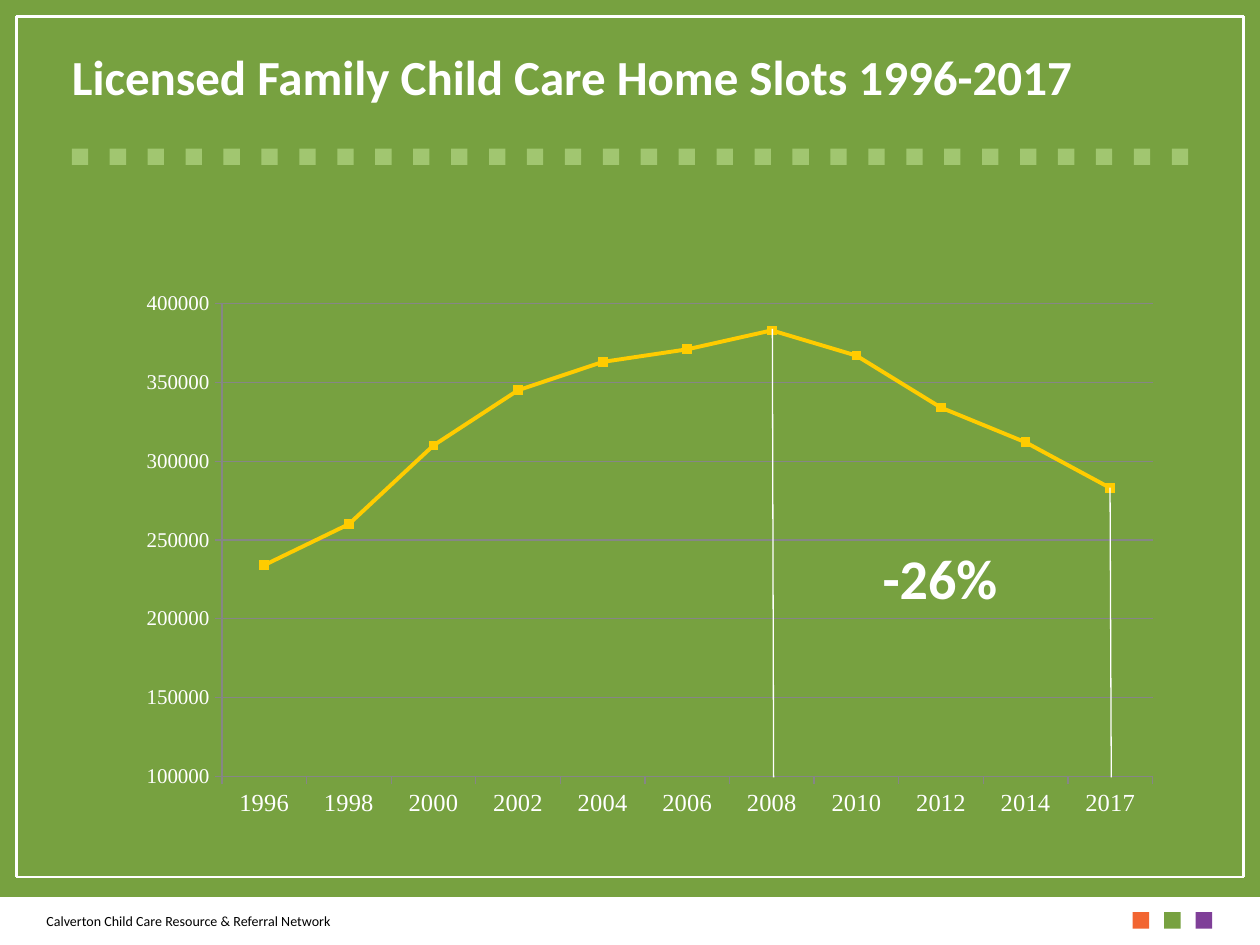
from lxml import etree
from pptx import Presentation
from pptx.chart.data import CategoryChartData
from pptx.dml.color import RGBColor
from pptx.enum.chart import XL_CHART_TYPE as ChartType, XL_MARKER_STYLE as MarkerStyle
from pptx.enum.chart import XL_TICK_MARK as TickMark
from pptx.enum.shapes import MSO_CONNECTOR as Connector, MSO_SHAPE as ShapeType
from pptx.enum.text import MSO_ANCHOR as Anchor, MSO_AUTO_SIZE as AutoSize, PP_ALIGN as Align
from pptx.oxml.ns import qn
from pptx.util import Inches, Pt

GREEN = RGBColor(0x77, 0xA1, 0x40)
LIGHT_GREEN = RGBColor(0xA1, 0xC6, 0x70)
ORANGE = RGBColor(0xF2, 0x65, 0x31)
PURPLE = RGBColor(0x7F, 0x3F, 0x98)
YELLOW = RGBColor(0xFF, 0xCC, 0x00)
GRAY = RGBColor(0x86, 0x86, 0x86)
WHITE = RGBColor(0xFF, 0xFF, 0xFF)
BLACK = RGBColor(0x00, 0x00, 0x00)

SQUARE = 0.13
SLOTS = {
    "1996": 234000, "1998": 260000, "2000": 310000, "2002": 345000,
    "2004": 363000, "2006": 371000, "2008": 383000, "2010": 367000,
    "2012": 334000, "2014": 312000, "2017": 283000,
}


def add_block(slide, left, top, width, height, color):
    """Add a plain filled rectangle."""
    shape = slide.shapes.add_shape(
        ShapeType.RECTANGLE, Inches(left), Inches(top), Inches(width), Inches(height))
    shape.shadow.inherit = False
    shape.fill.solid()
    shape.fill.fore_color.rgb = color
    shape.line.fill.background()


def add_line(slide, start, end, width):
    """Add a white straight line between two points."""
    points = [Inches(value) for value in (*start, *end)]
    line = slide.shapes.add_connector(Connector.STRAIGHT, *points)
    line.line.color.rgb = WHITE
    line.line.width = Pt(width)
    etree.SubElement(line._element.spPr, qn("a:effectLst"))


def style_font(font, size, color, name="Calibri", bold=False):
    """Set the face, size, weight and color of a font."""
    font.name = name
    font.size = Pt(size)
    font.bold = bold
    font.color.rgb = color


def add_label(slide, box, text, size, color, bold=False, align=Align.LEFT):
    """Add a single-paragraph text box."""
    frame = slide.shapes.add_textbox(*map(Inches, box)).text_frame
    frame.word_wrap = True
    frame.vertical_anchor = Anchor.MIDDLE
    paragraph = frame.paragraphs[0]
    paragraph.text = text
    paragraph.alignment = align
    style_font(paragraph.font, size, color, bold=bold)


def add_footer(slide, left, top, width, height):
    """Add the white footer band with its name and three colored squares."""
    add_block(slide, left, top, width, height, WHITE)
    for index, color in enumerate((ORANGE, GREEN, PURPLE)):
        add_block(slide, left + 8.99 + index * 0.25, top + 0.12, SQUARE, SQUARE, color)
    add_label(slide, (left + 0.27, top, 3.17, height),
              "Calverton Child Care Resource & Referral Network", 8, BLACK)


def add_frame(slide, left, top, width, height):
    """Outline the slide area with four white lines."""
    right, bottom = left + width, top + height
    corners = [(left, top), (right, top), (right, bottom), (left, bottom)]
    for start, end in zip(corners, corners[1:] + corners[:1]):
        add_line(slide, start, end, 1.5)


def add_square_row(slide, left, top, width, count=30):
    """Spread a row of light squares evenly over a width."""
    step = (width - SQUARE) / (count - 1)
    for index in range(count):
        add_block(slide, left + index * step, top, SQUARE, SQUARE, LIGHT_GREEN)


def set_title(slide, left, top, width, height):
    """Fill and place the title placeholder."""
    title = slide.shapes.title
    title.left, title.top = Inches(left), Inches(top)
    title.width, title.height = Inches(width), Inches(height)
    frame = title.text_frame
    frame.auto_size = AutoSize.NONE
    frame.vertical_anchor = Anchor.TOP
    frame.margin_left = frame.margin_right = frame.margin_bottom = Inches(0.2)
    frame.margin_top = Inches(0.1)
    paragraph = frame.paragraphs[0]
    paragraph.text = "Licensed Family Child Care Home Slots 1996-2017"
    paragraph.alignment = Align.LEFT
    style_font(paragraph.font, 28, WHITE, bold=True)


def set_plot_layout(chart, left, top, width, height):
    """Fix the inner plot area as fractions of the chart."""
    plot_area = chart._chartSpace.chart.plotArea
    for old in plot_area.findall(qn("c:layout")):
        plot_area.remove(old)
    layout = etree.Element(qn("c:layout"))
    plot_area.insert(0, layout)
    manual = etree.SubElement(layout, qn("c:manualLayout"))
    settings = {"layoutTarget": "inner", "xMode": "edge", "yMode": "edge",
                "x": left, "y": top, "w": width, "h": height}
    for tag, value in settings.items():
        etree.SubElement(manual, qn(f"c:{tag}")).set("val", str(value))


def style_axis(axis, size):
    """Give an axis white labels, gray lines and outer ticks."""
    style_font(axis.tick_labels.font, size, WHITE, "Times New Roman")
    axis.major_tick_mark = TickMark.OUTSIDE
    axis.minor_tick_mark = TickMark.NONE
    axis.format.line.color.rgb = GRAY
    axis.format.line.width = Pt(0.75)


def add_slots_chart(slide, left, top, width, height):
    """Add the line chart of slots by year."""
    data = CategoryChartData(number_format="General")
    data.categories = list(SLOTS)
    data.add_series("Series 1", list(SLOTS.values()))
    chart = slide.shapes.add_chart(
        ChartType.LINE_MARKERS, Inches(left), Inches(top),
        Inches(width), Inches(height), data).chart
    chart.has_legend = False
    chart.has_title = False
    style_font(chart.font, 10, BLACK, "Times New Roman")
    set_plot_layout(chart, 0.154, 0.181, 0.817, 0.7)

    style_axis(chart.category_axis, 14)
    value_axis = chart.value_axis
    style_axis(value_axis, 12)
    value_axis.minimum_scale, value_axis.maximum_scale = 100000, 400000
    value_axis.major_unit = 50000
    value_axis.has_major_gridlines = True
    value_axis.major_gridlines.format.line.color.rgb = GRAY
    value_axis.major_gridlines.format.line.width = Pt(0.75)

    chart.plots[0].vary_by_categories = False
    series = chart.plots[0].series[0]
    series.smooth = False
    series.format.line.color.rgb = YELLOW
    series.format.line.width = Pt(2.25)
    series.marker.style = MarkerStyle.SQUARE
    series.marker.size = 5
    series.marker.format.fill.solid()
    series.marker.format.fill.fore_color.rgb = YELLOW
    series.marker.format.line.color.rgb = YELLOW


def add_decline(slide, left, top, width, height):
    """Mark the drop between 2008 and 2017 with two lines and a percentage."""
    bottom = top + height
    for x, y in ((left, top), (left + width, top + 1.26)):
        add_line(slide, (x, y), (x + 0.01, bottom), 0.75)
    add_label(slide, (left + 0.54, top + 1.65, 1.58, 0.64), "-26%", 32, WHITE,
              bold=True, align=Align.CENTER)


def main():
    """Build and save the slide."""
    presentation = Presentation()
    presentation.slide_width, presentation.slide_height = Inches(10), Inches(7.5)
    slide = presentation.slides.add_slide(presentation.slide_layouts[5])
    slide.background.fill.solid()
    slide.background.fill.fore_color.rgb = GREEN
    add_footer(slide, 0, 7.12, 10, 0.38)
    add_frame(slide, 0.13, 0.13, 9.74, 6.83)
    add_square_row(slide, 0.57, 1.18, 8.86)
    set_title(slide, 0.37, 0.27, 9.26, 0.7)
    add_slots_chart(slide, 0.37, 1.44, 9.04, 5.36)
    add_decline(slide, 6.13, 2.61, 2.68, 3.56)
    presentation.save("out.pptx")


if __name__ == "__main__":
    main()
